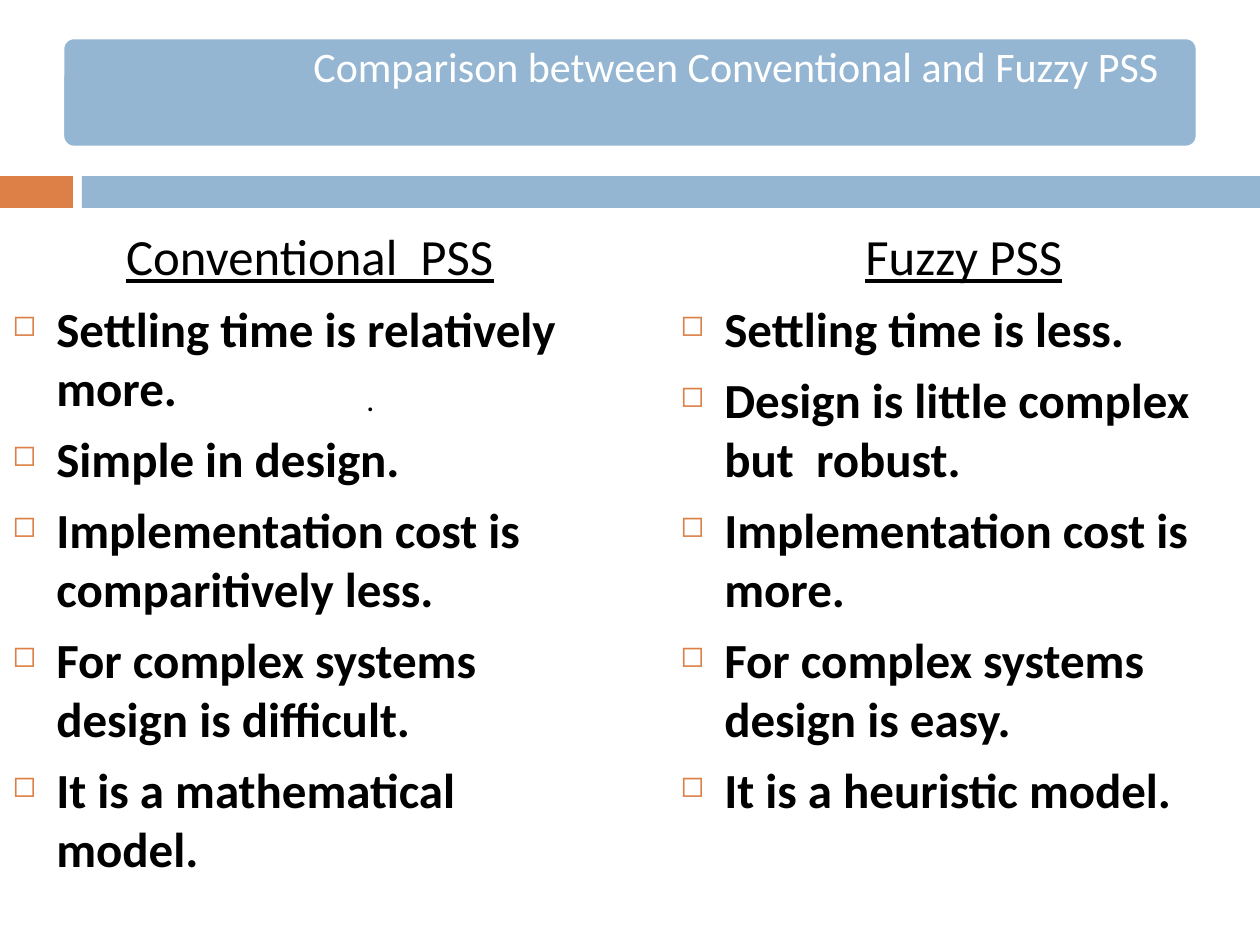
from dataclasses import dataclass

from lxml.etree import SubElement
from pptx import Presentation
from pptx.dml.color import RGBColor
from pptx.enum.shapes import MSO_SHAPE as Preset
from pptx.enum.text import MSO_ANCHOR as Anchor, PP_ALIGN as Align
from pptx.oxml.ns import qn
from pptx.util import Emu, Pt

PX_PER_INCH = 126
FONT = "Calibri"
BLUE = RGBColor(0x94, 0xB6, 0xD2)
ORANGE = RGBColor(0xDD, 0x80, 0x47)
WHITE = RGBColor(0xFF, 0xFF, 0xFF)
BLACK = RGBColor(0x00, 0x00, 0x00)
HANGING_INDENT = 44


def px(length: int) -> Emu:
    return Emu(round(length * 914400 / PX_PER_INCH))


@dataclass(frozen=True)
class Box:
    left: int
    top: int
    width: int
    height: int

    def emu(self) -> tuple[Emu, ...]:
        return tuple(px(n) for n in (self.left, self.top, self.width, self.height))


@dataclass(frozen=True)
class Panel:
    box: Box
    color: RGBColor
    preset: Preset = Preset.RECTANGLE


@dataclass(frozen=True)
class Column:
    box: Box
    heading: str
    points: tuple[str, ...]


TITLE_BANNER = Panel(Box(63, 38, 1134, 109), BLUE, Preset.ROUNDED_RECTANGLE)
STRIPES = (
    Panel(Box(0, 176, 73, 32), ORANGE),
    Panel(Box(82, 176, 1178, 32), BLUE),
)
COLUMNS = (
    Column(Box(0, 219, 620, 726), "Conventional  PSS", (
        "Settling time is relatively more.",
        "Simple in design.",
        "Implementation cost is comparitively less.",
        "For complex systems design is difficult.",
        "It is a mathematical model.",
    )),
    Column(Box(668, 219, 592, 726), "Fuzzy PSS", (
        "Settling time is less.",
        "Design is little complex but  robust.",
        "Implementation cost is more.",
        "For complex systems design is easy.",
        "It is a heuristic model.",
    )),
)


def add_panel(slide, panel: Panel):
    shape = slide.shapes.add_shape(panel.preset, *panel.box.emu())
    shape.shadow.inherit = False
    shape.fill.solid()
    shape.fill.fore_color.rgb = panel.color
    shape.line.fill.background()
    return shape


def style(paragraph, size: int, color: RGBColor = BLACK,
          bold: bool = False, underline: bool = False) -> None:
    for run in paragraph.runs:
        font = run.font
        font.name, font.size = FONT, Pt(size)
        font.bold, font.underline = bold, underline
        font.color.rgb = color


def add_text_frame(slide, box: Box):
    text_frame = slide.shapes.add_textbox(*box.emu()).text_frame
    text_frame.word_wrap = True
    text_frame.vertical_anchor = Anchor.TOP
    return text_frame


def add_label(slide, box: Box, text: str, size: int, color: RGBColor):
    text_frame = add_text_frame(slide, box)
    text_frame.text = text
    style(text_frame.paragraphs[0], size, color)
    return text_frame


def set_hanging_indent(paragraph) -> None:
    properties = paragraph._p.get_or_add_pPr()
    properties.set("marL", str(px(HANGING_INDENT)))
    properties.set("indent", str(-px(HANGING_INDENT)))


def add_bullet(paragraph) -> None:
    properties = paragraph._p.get_or_add_pPr()
    color = SubElement(properties, qn("a:buClr"))
    SubElement(color, qn("a:srgbClr"), val=str(ORANGE))
    SubElement(properties, qn("a:buSzPct"), val="60000")
    SubElement(properties, qn("a:buChar"), char="◻")


def add_column(slide, column: Column) -> None:
    text_frame = add_text_frame(slide, column.box)
    text_frame.text = "\n".join((column.heading, *column.points))
    heading, *points = text_frame.paragraphs
    for paragraph in text_frame.paragraphs:
        paragraph.space_before = Pt(7)
        set_hanging_indent(paragraph)
    heading.alignment = Align.CENTER
    style(heading, 29, underline=True)
    for point in points:
        add_bullet(point)
        style(point, 28, bold=True)


def main() -> None:
    presentation = Presentation()
    presentation.slide_width, presentation.slide_height = px(1260), px(945)
    slide = presentation.slides.add_slide(presentation.slide_layouts[6])

    for stripe in STRIPES:
        add_panel(slide, stripe)
    banner = add_panel(slide, TITLE_BANNER)
    banner.adjustments[0] = 0.1
    banner.line.color.rgb = WHITE
    banner.line.width = Pt(1.5)

    title = add_label(slide, Box(301, 38, 896, 109),
                      "Comparison between Conventional and Fuzzy PSS", 24, WHITE)
    title.margin_top = px(3)
    add_label(slide, Box(354, 374, 630, 50), ".", 18, BLACK)
    for column in COLUMNS:
        add_column(slide, column)

    presentation.save("out.pptx")


if __name__ == "__main__":
    main()
